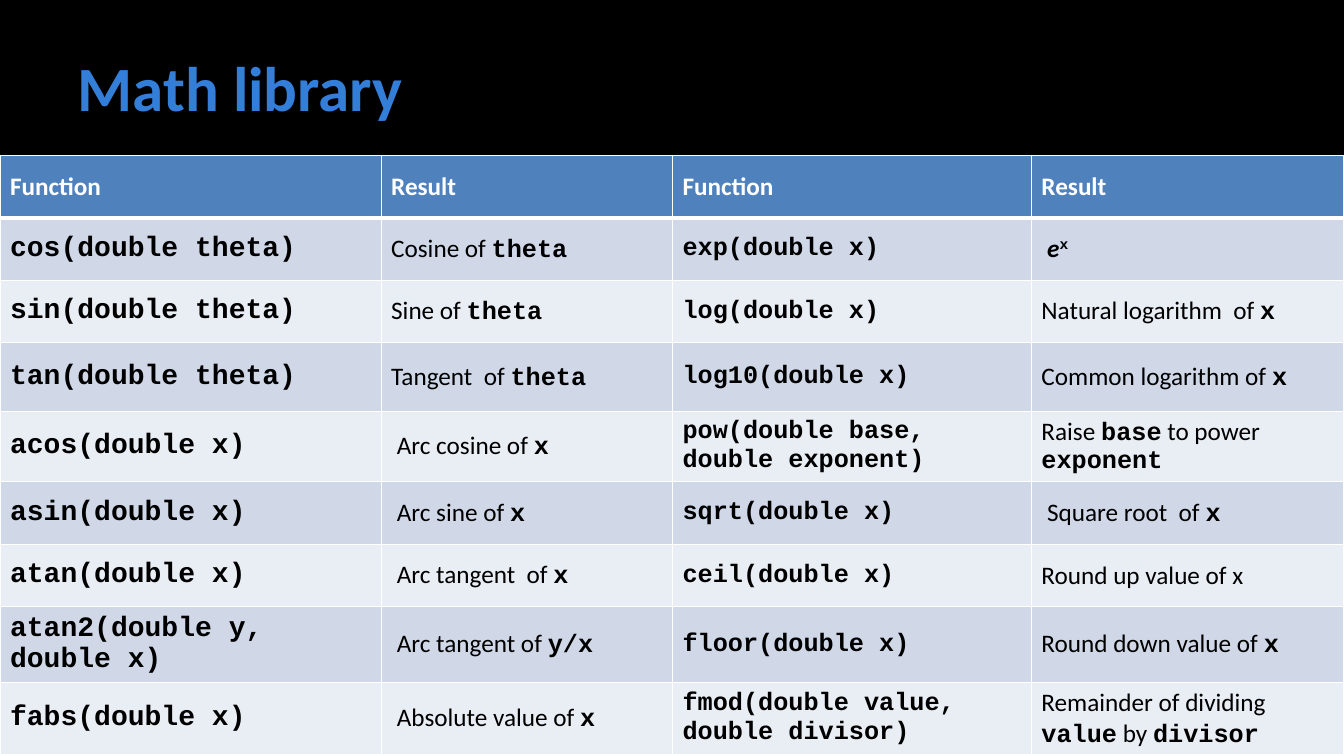
"""Build the math library slide with its table of functions."""
from lxml.etree import SubElement
from pptx import Presentation
from pptx.dml.color import RGBColor
from pptx.enum.shapes import MSO_SHAPE
from pptx.enum.text import MSO_ANCHOR, PP_ALIGN
from pptx.oxml.ns import qn
from pptx.util import Inches, Pt

TITLE = "Math library"
HEADS = ("Function", "Result", "Function", "Result")
ROWS = [
    ("cos(double theta)", "Cosine of `theta`", "exp(double x)", " ^e^x"),
    ("sin(double theta)", "Sine of `theta`", "log(double x)", "Natural logarithm  of `x`"),
    ("tan(double theta)", "Tangent  of `theta`", "log10(double x)", "Common logarithm of `x`"),
    ("acos(double x)", " Arc cosine of `x`", "pow(double base, double exponent)",
     "Raise `base` to power `exponent`"),
    ("asin(double x)", " Arc sine of `x`", "sqrt(double x)", " Square root  of `x`"),
    ("atan(double x)", " Arc tangent  of `x`", "ceil(double x)", "Round up value of x"),
    ("atan2(double y, double x)", " Arc tangent of `y/x`", "floor(double x)",
     "Round down value of `x`"),
    ("fabs(double x)", " Absolute value of `x`", "fmod(double value, double divisor)",
     "Remainder of dividing `value` by `divisor`"),
]
WIDTHS = (3.78, 2.89, 3.56, 3.1)
HEIGHTS = (0.62, 0.62, 0.62, 0.68, 0.7, 0.62, 0.62, 0.75, 0.72)
SANS, MONO = "Calibri", "Courier New"
WHITE, BLACK, BLUE = "FFFFFF", "000000", "4F81BD"
BANDS = ("E9EDF4", "D0D8E8")


def color(value):
    return RGBColor.from_string(value)


def style(font, name, size, shade, bold):
    font.name, font.size, font.bold = name, Pt(size), bold
    font.color.rgb = color(shade)


def border(cell, low):
    props = cell._tc.get_or_add_tcPr()
    for spot, side in enumerate(("L", "R", "T", "B")):
        width = low if side == "B" else 1
        line = SubElement(props, qn("a:ln" + side), w=str(Pt(width)))
        fill = SubElement(line, qn("a:solidFill"))
        SubElement(fill, qn("a:srgbClr"), val=WHITE)
        props.insert(spot, line)


def paint(cell, fill, low=1):
    cell.fill.solid()
    cell.fill.fore_color.rgb = color(fill)
    cell.vertical_anchor = MSO_ANCHOR.MIDDLE
    border(cell, low)


def result(par, text):
    power = "^" in text
    for spot, part in enumerate(text.split("^" if power else "`")):
        if not part:
            continue
        run = par.add_run()
        run.text = part
        code = spot == 2 if power else spot % 2 == 1
        style(run.font, MONO if code else SANS, 18, BLACK, spot > 0 and (power or code))
        if power and spot == 1:
            run.font.italic = True
        if power and spot == 2:
            run.font._element.set("baseline", "30000")


def header(slide):
    band = slide.shapes.add_shape(MSO_SHAPE.RECTANGLE, 0, 0, Inches(13.33), Inches(1.57))
    band.shadow.inherit = False
    band.fill.solid()
    band.fill.fore_color.rgb = color(BLACK)
    band.line.fill.background()
    title = slide.shapes.title
    band.element.addnext(title.element)
    title.left, title.top = Inches(0.67), Inches(0.17)
    title.width, title.height = Inches(12), Inches(1.37)
    frame = title.text_frame
    frame.text = TITLE
    frame.vertical_anchor = MSO_ANCHOR.MIDDLE
    frame.margin_left = Inches(0.1)
    frame.margin_right = frame.margin_top = frame.margin_bottom = Inches(0.05)
    par = frame.paragraphs[0]
    par.alignment = PP_ALIGN.LEFT
    style(par.runs[0].font, SANS, 45, "337ED9", True)


def grid(slide):
    frame = slide.shapes.add_table(len(HEIGHTS), len(WIDTHS), 0, Inches(1.54),
                                   Inches(sum(WIDTHS)), Inches(sum(HEIGHTS)))
    table = frame.table
    table.horz_banding = False
    for col, width in zip(table.columns, WIDTHS):
        col.width = Inches(width)
    for row, height in zip(table.rows, HEIGHTS):
        row.height = Inches(height)
    for col, text in enumerate(HEADS):
        cell = table.cell(0, col)
        cell.text_frame.text = text
        style(cell.text_frame.paragraphs[0].runs[0].font, SANS, 18, WHITE, True)
        paint(cell, BLUE, 3)
    for row, texts in enumerate(ROWS, 1):
        for col, text in enumerate(texts):
            cell = table.cell(row, col)
            par = cell.text_frame.paragraphs[0]
            if col % 2:
                result(par, text)
            else:
                par.text = text
                style(par.runs[0].font, MONO, 18 if col else 20, BLACK, True)
            paint(cell, BANDS[row % 2])


def main():
    deck = Presentation()
    deck.slide_width, deck.slide_height = Inches(13.33), Inches(7.5)
    slide = deck.slides.add_slide(deck.slide_layouts[5])
    header(slide)
    grid(slide)
    deck.save("out.pptx")


if __name__ == "__main__":
    main()
